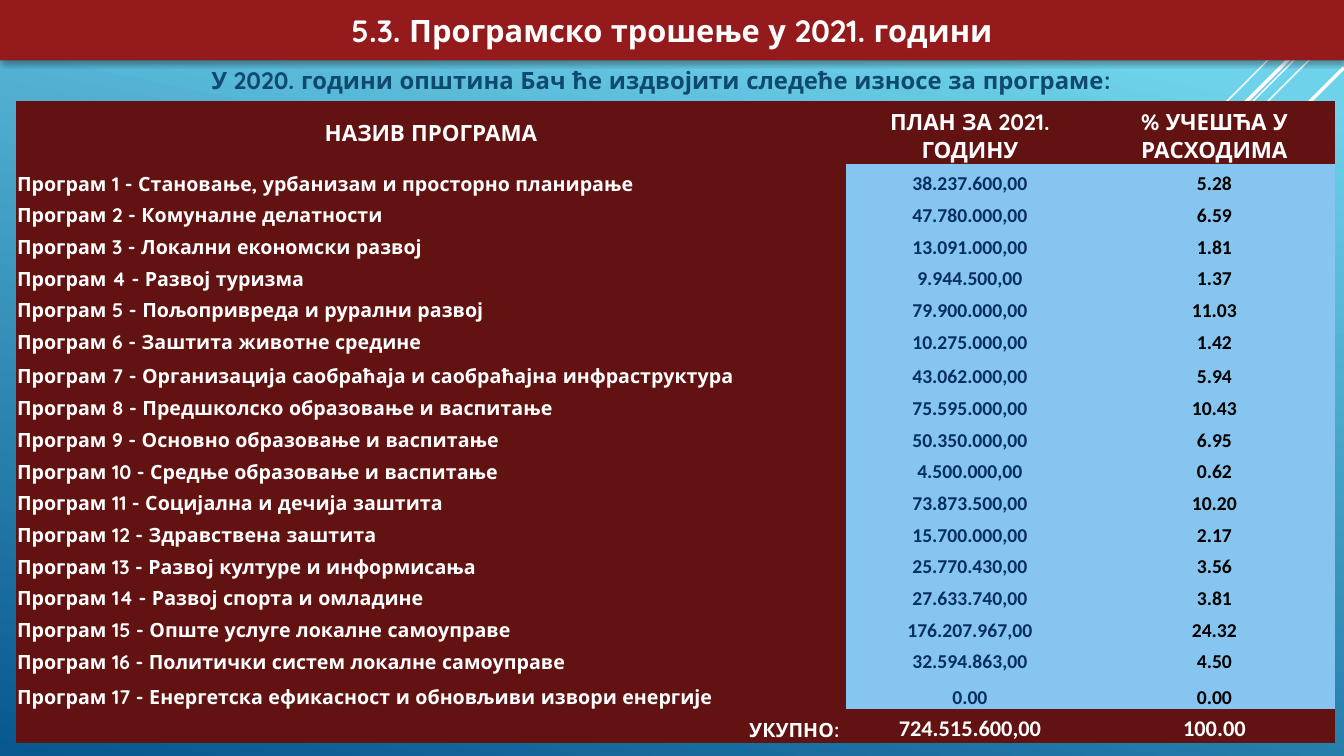
from lxml import etree
from pptx import Presentation
from pptx.dml.color import RGBColor
from pptx.enum.shapes import MSO_CONNECTOR
from pptx.enum.text import MSO_ANCHOR, MSO_AUTO_SIZE, PP_ALIGN
from pptx.oxml import parse_xml
from pptx.oxml.ns import nsdecls, qn
from pptx.util import Inches, Pt

STRAIGHT = MSO_CONNECTOR.STRAIGHT
TOP, MIDDLE, BOTTOM = MSO_ANCHOR.TOP, MSO_ANCHOR.MIDDLE, MSO_ANCHOR.BOTTOM
LEFT, CENTER, RIGHT = PP_ALIGN.LEFT, PP_ALIGN.CENTER, PP_ALIGN.RIGHT
NO_AUTOFIT = MSO_AUTO_SIZE.NONE

HEADING_FONT, FIGURE_FONT = "Quicksand", "Calibri"
WHITE, BLACK, NAVY, TEAL = "FFFFFF", "000000", "052F61", "0F496F"
RED, MAROON, SKY = "941A1B", "631212", "86C5EF"
PLAIN_TABLE = "{2D5ABB26-0587-4C30-8999-92F81FD0307C}"

RAYS = [
    (13.16, 0.01, 9, 4.18, 1),
    (13.33, 0.1, 6.68, 6.75, 1),
    (13.33, 0.25, 7.91, 5.67, 1),
    (13.33, 0.04, 8.02, 5.34, 2.5),
    (13.33, 0.67, 8.58, 5.42, 2.5),
]
HEADER = ["НАЗИВ ПРОГРАМА", "ПЛАН ЗА 2021. ГОДИНУ", "% УЧЕШЋА У РАСХОДИМА"]
PROGRAMS = [
    ("Становање, урбанизам и просторно планирање", "38.237.600,00", "5.28"),
    ("Комуналне делатности", "47.780.000,00", "6.59"),
    ("Локални економски развој", "13.091.000,00", "1.81"),
    ("Развој туризма", "9.944.500,00", "1.37"),
    ("Пољопривреда и рурални развој", "79.900.000,00", "11.03"),
    ("Заштита животне средине", "10.275.000,00", "1.42"),
    ("Организација саобраћаја и саобраћајна инфраструктура", "43.062.000,00", "5.94"),
    ("Предшколско образовање и васпитање", "75.595.000,00", "10.43"),
    ("Основно образовање и васпитање", "50.350.000,00", "6.95"),
    ("Средње образовање и васпитање", "4.500.000,00", "0.62"),
    ("Социјална и дечија заштита", "73.873.500,00", "10.20"),
    ("Здравствена заштита", "15.700.000,00", "2.17"),
    ("Развој културе и информисања", "25.770.430,00", "3.56"),
    ("Развој спорта и омладине", "27.633.740,00", "3.81"),
    ("Опште услуге локалне самоуправе", "176.207.967,00", "24.32"),
    ("Политички систем локалне самоуправе", "32.594.863,00", "4.50"),
    ("Енергетска ефикасност и обновљиви извори енергије", "0.00", "0.00"),
]
TOTAL = ["УКУПНО: ", "724.515.600,00", "100.00"]
COLUMN_WIDTHS = [8.23, 2.46, 2.39]
TABLE_HEIGHT = 6.37
SPECIAL_HEIGHTS = {0: 0.63, 7: 0.34, 17: 0.35, 18: 0.33}


def color(value):
    return RGBColor.from_string(value)


class BudgetSlide:
    """Holds the style and the current slide, and adds each kind of element."""

    def __init__(self, deck):
        self.page = deck.slides.add_slide(deck.slide_layouts[0])

    def background(self, start, end, angle):
        fill = self.page.background.fill
        fill.gradient()
        fill.gradient_angle = 360 - angle
        for stop, position, shade in zip(fill.gradient_stops, (0.1, 1), (start, end)):
            stop.position = position
            stop.color.rgb = color(shade)

    def ray(self, x1, y1, x2, y2, width):
        line = self.page.shapes.add_connector(
            STRAIGHT, Inches(x1), Inches(y1), Inches(x2), Inches(y2))
        line.line.color.rgb = color(WHITE)
        line.line.width = Pt(width)
        etree.SubElement(line.element.spPr, qn("a:effectLst"))
        tree = line.element.getparent()
        first_placeholder = self.page.shapes.title.element
        tree.insert(tree.index(first_placeholder), line.element)

    def add_text(self, frame, text, size, shade, font=HEADING_FONT, align=CENTER):
        para = frame.paragraphs[0]
        para.alignment = align
        span = para.add_run()
        span.text = text
        span.font.size = Pt(size)
        span.font.name = font
        span.font.bold = True
        span.font.color.rgb = color(shade)
        return para

    def place(self, box, left, top, width, height, anchor):
        box.left, box.top = Inches(left), Inches(top)
        box.width, box.height = Inches(width), Inches(height)
        frame = box.text_frame
        frame.word_wrap = True
        frame.auto_size = NO_AUTOFIT
        frame.vertical_anchor = anchor
        return frame

    def title_bar(self, text):
        box = self.page.shapes.title
        frame = self.place(box, 0, 0, 13.33, 0.6, MIDDLE)
        box.element.spPr.append(parse_xml(
            f'<a:prstGeom {nsdecls("a")} prst="roundRect"><a:avLst/></a:prstGeom>'))
        box.fill.solid()
        box.fill.fore_color.rgb = color(RED)
        box.element.spPr.append(parse_xml(
            f'<a:effectLst {nsdecls("a")}>'
            f'<a:outerShdw blurRad="{Pt(3.5)}" dist="{Pt(2.2)}" dir="5400000" rotWithShape="0">'
            f'<a:srgbClr val="{BLACK}"><a:alpha val="32000"/></a:srgbClr>'
            '</a:outerShdw></a:effectLst>'))
        self.add_text(frame, text, 22, WHITE)

    def subtitle(self, text):
        frame = self.place(self.page.placeholders[1], 1.68, 0.6, 9.75, 0.55, TOP)
        para = self.add_text(frame, text, 17, TEAL)
        para.space_before = Pt(3.4)
        para.space_after = Pt(6)

    def cell(self, cell, text, size, shade, fill, font, align=CENTER, anchor=BOTTOM):
        cell.fill.solid()
        cell.fill.fore_color.rgb = color(fill)
        cell.margin_left = cell.margin_top = cell.margin_right = Inches(0.01)
        cell.margin_bottom = 0
        cell.vertical_anchor = anchor
        self.add_text(cell.text_frame, text, size, shade, font, align)

    def table(self):
        count = len(PROGRAMS) + 2
        regular = (TABLE_HEIGHT - sum(SPECIAL_HEIGHTS.values())) / (count - len(SPECIAL_HEIGHTS))
        frame = self.page.shapes.add_table(
            count, len(HEADER), Inches(0.16), Inches(1),
            Inches(sum(COLUMN_WIDTHS)), Inches(TABLE_HEIGHT))
        table = frame.table
        table.first_row = table.horz_banding = False
        for style in frame.element.iter(qn("a:tableStyleId")):
            style.text = PLAIN_TABLE
        for column, width in zip(table.columns, COLUMN_WIDTHS):
            column.width = Inches(width)
        for index, row in enumerate(table.rows):
            row.height = Inches(SPECIAL_HEIGHTS.get(index, regular))
        for index, text in enumerate(HEADER):
            self.cell(table.cell(0, index), text, 16, WHITE, MAROON, HEADING_FONT,
                      anchor=BOTTOM if index else MIDDLE)
        for number, (name, plan, share) in enumerate(PROGRAMS, 1):
            self.cell(table.cell(number, 0), f"Програм {number} - {name}", 14,
                      WHITE, MAROON, HEADING_FONT, LEFT)
            self.cell(table.cell(number, 1), plan, 14, NAVY, SKY, FIGURE_FONT)
            self.cell(table.cell(number, 2), share, 14, BLACK, SKY, FIGURE_FONT)
        label, *figures = TOTAL
        self.cell(table.cell(count - 1, 0), label, 14, WHITE, MAROON, HEADING_FONT, RIGHT)
        for index, text in enumerate(figures, 1):
            self.cell(table.cell(count - 1, index), text, 16, WHITE, MAROON, FIGURE_FONT)


def main():
    deck = Presentation()
    deck.slide_width, deck.slide_height = Inches(13.33), Inches(7.5)
    slide = BudgetSlide(deck)
    slide.background("6ED2EB", "06588E", 102)
    for ray in RAYS:
        slide.ray(*ray)
    slide.title_bar("5.3. Програмско трошење у 2021. години")
    slide.subtitle("У 2020. години општина Бач ће издвојити следеће износе за програме:")
    slide.table()
    deck.save("out.pptx")


if __name__ == "__main__":
    main()
